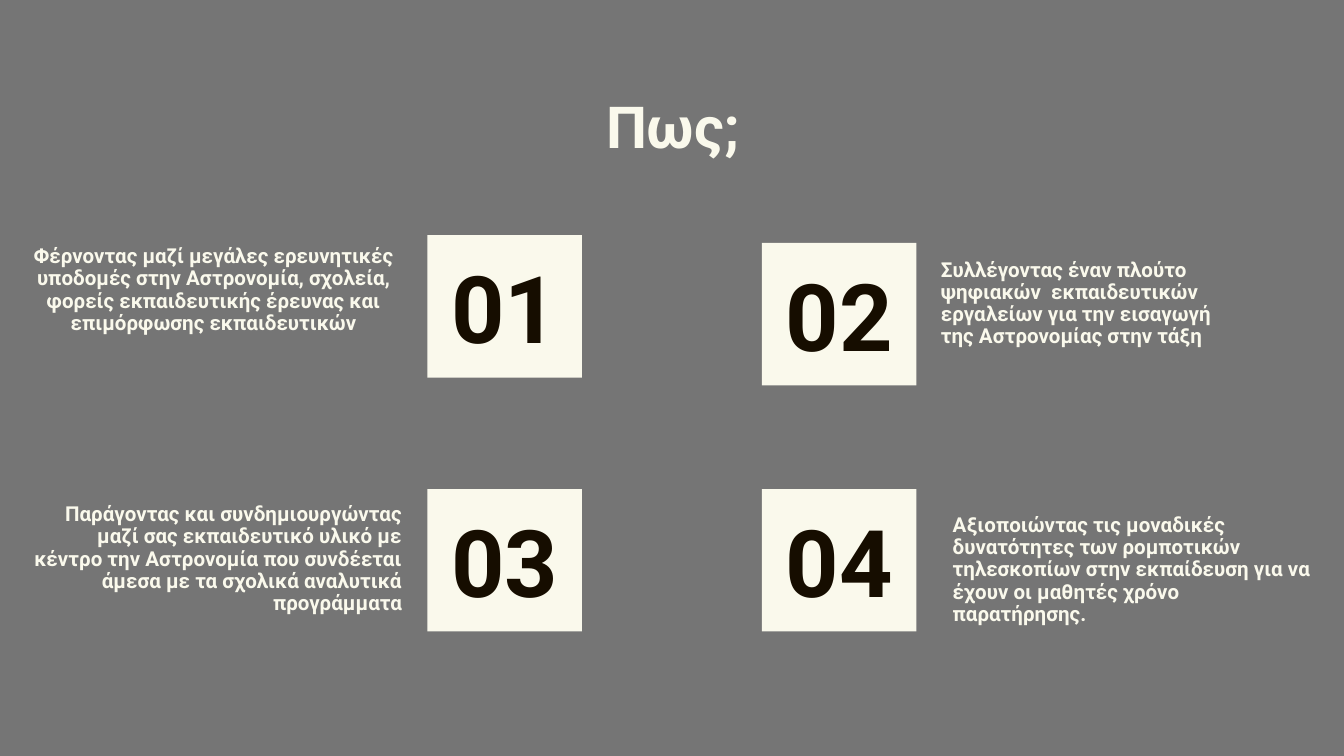
"""Build the slide that answers "how" in four numbered points."""
from pptx import Presentation
from pptx.dml.color import RGBColor
from pptx.enum.shapes import MSO_SHAPE
from pptx.enum.text import MSO_ANCHOR, PP_ALIGN

RECTANGLE = MSO_SHAPE.RECTANGLE
TOP, MIDDLE = MSO_ANCHOR.TOP, MSO_ANCHOR.MIDDLE
LEFT, CENTER, RIGHT = PP_ALIGN.LEFT, PP_ALIGN.CENTER, PP_ALIGN.RIGHT
from pptx.util import Pt

GREY, CREAM, DARK = "757575", "FAF9EC", "160D00"
SLIDE_SIZE = (720, 405)
TILE_SIZE = (82.8, 76.3)
TILE_LEFTS = (229, 408.2)
TITLE = ("Πως;", (56.9, 42.5, 607, 49.7))
POINTS = [
    {"tile_top": 126, "align": CENTER, "box": (0, 124.6, 229, 87.8),
     "text": "Φέρνοντας μαζί μεγάλες ερευνητικές υποδομές στην Αστρονομία, σχολεία, "
             "φορείς εκπαιδευτικής έρευνας και επιμόρφωσης εκπαιδευτικών"},
    {"tile_top": 130.2, "align": LEFT, "box": (497, 131.8, 172.8, 62.6),
     "text": "Συλλέγοντας έναν πλούτο ψηφιακών  εκπαιδευτικών εργαλείων "
             "για την εισαγωγή της Αστρονομίας στην τάξη"},
    {"tile_top": 262, "align": RIGHT, "box": (7.2, 262.8, 215.3, 62.6),
     "text": "Παράγοντας και συνδημιουργώντας μαζί σας εκπαιδευτικό υλικό με κέντρο "
             "την Αστρονομία που συνδέεται άμεσα με τα σχολικά αναλυτικά προγράμματα"},
    {"tile_top": 262, "align": LEFT, "box": (503.3, 268.6, 209.5, 62.6),
     "text": "Αξιοποιώντας τις μοναδικές δυνατότητες των ρομποτικών τηλεσκοπίων "
             "στην εκπαίδευση για να έχουν οι μαθητές χρόνο παρατήρησης."},
]
TITLE_FORMAT = {"size": Pt(31), "name": "Roboto", "bold": True}
NUMBER_FORMAT = {**TITLE_FORMAT, "size": Pt(50)}
BODY_FORMAT = {**TITLE_FORMAT, "size": Pt(11)}


def color(value):
    """Return the colour for a hex string."""
    return RGBColor.from_string(value)


def write(shape, text, font_format, font_color, anchor, align, spacing=1.0):
    """Put one formatted paragraph into a shape."""
    frame = shape.text_frame
    frame_format = {"word_wrap": True, "vertical_anchor": anchor}
    for side in ("left", "top", "right", "bottom"):
        frame_format[f"margin_{side}"] = Pt(7.2)
    for name, value in frame_format.items():
        setattr(frame, name, value)
    paragraph = frame.paragraphs[0]
    paragraph.alignment, paragraph.line_spacing = align, spacing
    run = paragraph.add_run()
    run.text = text
    for name, value in font_format.items():
        setattr(run.font, name, value)
    run.font.color.rgb = color(font_color)


def add_text(slide, box, *content):
    """Add a text box."""
    write(slide.shapes.add_textbox(*map(Pt, box)), *content)


def add_tile(slide, box, number):
    """Add a numbered tile."""
    tile = slide.shapes.add_shape(RECTANGLE, *map(Pt, box))
    tile.shadow.inherit = False
    tile.fill.solid()
    tile.fill.fore_color.rgb = color(CREAM)
    tile.line.fill.background()
    write(tile, number, NUMBER_FORMAT, DARK, MIDDLE, CENTER)


def main():
    """Build and save the presentation."""
    presentation = Presentation()
    presentation.slide_width, presentation.slide_height = map(Pt, SLIDE_SIZE)
    slide = presentation.slides.add_slide(presentation.slide_layouts[6])
    slide.background.fill.solid()
    slide.background.fill.fore_color.rgb = color(GREY)
    title, title_box = TITLE
    add_text(slide, title_box, title, TITLE_FORMAT, CREAM, MIDDLE, CENTER)
    for index, point in enumerate(POINTS):
        tile_box = (TILE_LEFTS[index % 2], point["tile_top"], *TILE_SIZE)
        add_tile(slide, tile_box, f"{index + 1:02}")
        add_text(slide, point["box"], point["text"], BODY_FORMAT, CREAM, TOP, point["align"], 0.9)
    presentation.save("out.pptx")


if __name__ == "__main__":
    main()
